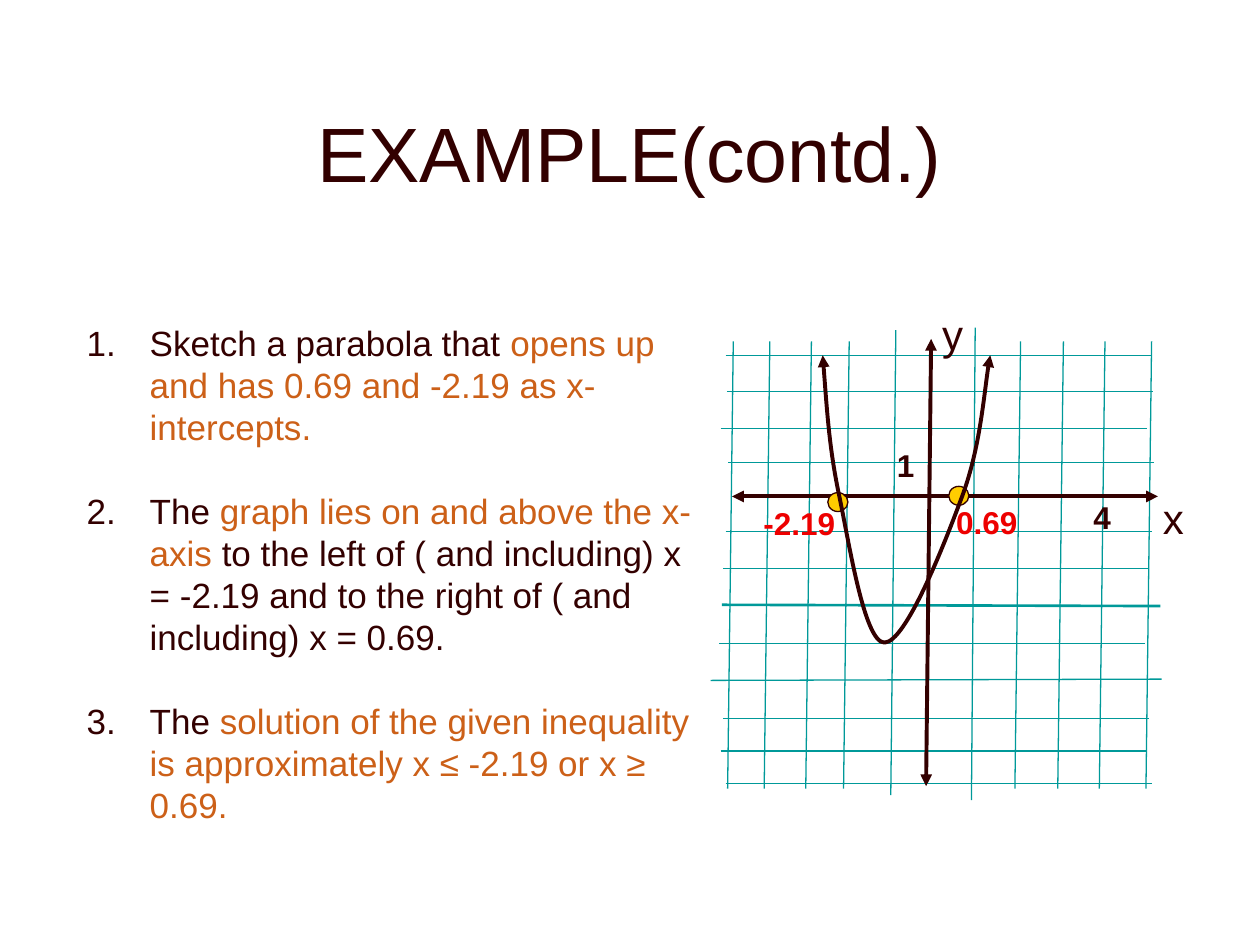
from dataclasses import dataclass

from lxml import etree
from pptx import Presentation
from pptx import util as u
from pptx.dml import color
from pptx.enum import shapes, text
from pptx.oxml import ns


@dataclass(frozen=True)
class Theme:
    font: str = "Arial"
    heading: str = "320000"
    ink: str = "330000"
    accent: str = "CC6018"
    root: str = "ED0000"
    grid: str = "009999"
    dot: str = "FFCC00"
    title_size: int = 44
    axis_size: int = 24
    body_size: int = 20
    tick_size: int = 18
    leading: int = 24
    thin: float = 0.75
    medium: float = 1.5
    thick: float = 2.25


THEME = Theme()
COLUMNS, ROWS = 100, 75
WIDTH, HEIGHT = u.Inches(10), u.Inches(7.5)


@dataclass(frozen=True)
class Box:
    left: float
    top: float
    width: float
    height: float

    def point(self, column, row):
        return (round((self.left + column) * WIDTH / COLUMNS),
                round((self.top + row) * HEIGHT / ROWS))

    def inset(self, left, top, width, height):
        return Box(self.left + left, self.top + top, width, height)

    def frame(self):
        return (*self.point(0, 0),
                round(self.width * WIDTH / COLUMNS),
                round(self.height * HEIGHT / ROWS))


def apply(target, values):
    for name, value in values.items():
        setattr(target, name, value)


def rgb(value):
    return color.RGBColor.from_string(value)


def add_span(para, words, size, ink, bold=False):
    span = para.add_run()
    apply(span, {"text": words})
    apply(span.font, {"name": THEME.font, "size": u.Pt(size), "bold": bold})
    span.font.color.rgb = rgb(ink)


def add_text_frame(page, box, **values):
    frame = page.shapes.add_textbox(*box.frame()).text_frame
    apply(frame, {"word_wrap": True, **values})
    return frame


def style_line(shape, ink, weight, arrows=False):
    shape.line.width = u.Pt(weight)
    shape.line.color.rgb = rgb(ink)
    if arrows:
        outline = shape._element.spPr.find(ns.qn("a:ln"))
        for end in ("a:headEnd", "a:tailEnd"):
            etree.SubElement(outline, ns.qn(end), type="triangle")


def add_line(page, box, start, end, ink=THEME.grid, weight=THEME.thin, arrows=False):
    line = page.shapes.add_connector(
        shapes.MSO_CONNECTOR.STRAIGHT, *box.point(*start), *box.point(*end))
    style_line(line, ink, weight, arrows)
    etree.SubElement(line._element.spPr, ns.qn("a:effectLst"))


def draw_title(page, box):
    frame = add_text_frame(page, box, vertical_anchor=text.MSO_ANCHOR.MIDDLE)
    para = frame.paragraphs[0]
    para.alignment = text.PP_ALIGN.CENTER
    add_span(para, "EXAMPLE(contd.)", THEME.title_size, THEME.heading)


def draw_steps(page, box):
    steps = [
        [("Sketch a parabola that ", THEME.ink),
         ("opens up and has 0.69 and -2.19 as x-intercepts.", THEME.accent)],
        [("The ", THEME.ink),
         ("graph lies on and above the x-axis", THEME.accent),
         (" to the left of ( and including) x = -2.19 and to the right of "
          "( and including) x = 0.69.", THEME.ink)],
        [("The ", THEME.ink),
         ("solution of the given inequality is approximately x ≤ -2.19 or x ≥ 0.69.",
          THEME.accent)],
    ]
    frame = add_text_frame(page, box)
    for index, spans in enumerate(steps):
        para = frame.add_paragraph() if index else frame.paragraphs[0]
        apply(para, {"line_spacing": u.Pt(THEME.leading),
                     "space_before": u.Pt(THEME.leading if index else 0)})
        layout = para._p.get_or_add_pPr()
        layout.set("marL", str(u.Inches(0.5)))
        layout.set("indent", str(-u.Inches(0.5)))
        etree.SubElement(layout, ns.qn("a:buFont"), typeface="+mj-lt")
        etree.SubElement(layout, ns.qn("a:buAutoNum"), type="arabicPeriod")
        for words, ink in spans:
            add_span(para, words, THEME.body_size, ink)


def draw_grid(page, box):
    for column in (2.2, 5.1, 8.4, 11.4, 25, 28.4, 31.7, 35.4):
        add_line(page, box, (column, 3.1), (column - 0.45, 38.6))
    add_line(page, box, (15.1, 2.2), (14.7, 39.1))
    add_line(page, box, (21.4, 2), (21.1, 39.5))
    for left, row in ((1.6, 4.2), (1.7, 7.1), (1.2, 10), (1.8, 12.7), (1.6, 18.2),
                      (1.4, 21.1), (1.1, 27.1), (1.4, 33), (1.2, 35.6), (1.6, 38.2)):
        add_line(page, box, (left, row), (left + 33.8, row))
    add_line(page, box, (0.4, 30), (36.2, 29.9))
    add_line(page, box, (1.3, 24), (36.1, 24.1), weight=THEME.medium)


def draw_axes(page, box):
    for start, end in (((17.9, 2.9), (17.5, 38.4)), ((2.1, 15.4), (35.9, 15.4))):
        add_line(page, box, start, end, THEME.ink, THEME.thick, arrows=True)


def draw_roots(page, box):
    for left, top in ((9.7, 15.1), (19.3, 14.6)):
        dot = page.shapes.add_shape(
            shapes.MSO_SHAPE.OVAL, *box.inset(left, top, 1.6, 1.5).frame())
        dot.shadow.inherit = False
        dot.fill.solid()
        dot.fill.fore_color.rgb = rgb(THEME.dot)
        style_line(dot, THEME.ink, THEME.thin)


def draw_parabola(page, box):
    start, *controls = [box.point(*place) for place in (
        (9.3, 4.2),
        (9.6, 7.9), (9.8, 11.5), (10.6, 15.3),
        (11.4, 19.1), (12.6, 27), (14.2, 27),
        (15.9, 27), (19, 19.1), (20.4, 15.3),
        (21.8, 11.5), (22.2, 6.1), (22.6, 4.2))]
    builder = page.shapes.build_freeform(*start)
    builder.add_line_segments(controls, close=False)
    curve = builder.convert_to_shape()
    curve.shadow.inherit = False
    curve.fill.background()
    style_line(curve, THEME.ink, THEME.thick, arrows=True)
    segments = list(curve._element.iter(ns.qn("a:lnTo")))
    outline = segments[0].getparent()
    for first in range(0, len(segments), 3):
        bezier = etree.SubElement(outline, ns.qn("a:cubicBezTo"))
        for segment in segments[first:first + 3]:
            bezier.append(segment[0])
            outline.remove(segment)


def draw_labels(page, box):
    tick, axis = THEME.tick_size, THEME.axis_size
    for words, place, size, ink, bold in (
            ("-2.19", (3.6, 15.5, 7.7, 4), tick, THEME.root, True),
            ("0.69", (18.9, 15.4, 6.9, 4), tick, THEME.root, True),
            ("4", (29.8, 15, 3.4, 4), tick, THEME.ink, True),
            ("1", (14.2, 10.9, 3.4, 4), tick, THEME.ink, True),
            ("x", (35.3, 14.6, 3.2, 5), axis, THEME.ink, False),
            ("y", (17.8, 0, 3.7, 5), axis, THEME.ink, False)):
        frame = add_text_frame(page, box.inset(*place), word_wrap=False)
        add_span(frame.paragraphs[0], words, size, ink, bold)


def draw_graph(page, box):
    for draw in (draw_grid, draw_axes, draw_roots, draw_parabola, draw_labels):
        draw(page, box)


def main():
    deck = Presentation()
    apply(deck, {"slide_width": WIDTH, "slide_height": HEIGHT})
    page = deck.slides.add_slide(deck.slide_layouts[6])
    draw_title(page, Box(7.5, 5.8, 85, 12.5))
    draw_graph(page, Box(56, 24, 38.5, 39.5))
    draw_steps(page, Box(5.9, 25, 51.4, 49))
    deck.save("out.pptx")


if __name__ == "__main__":
    main()
